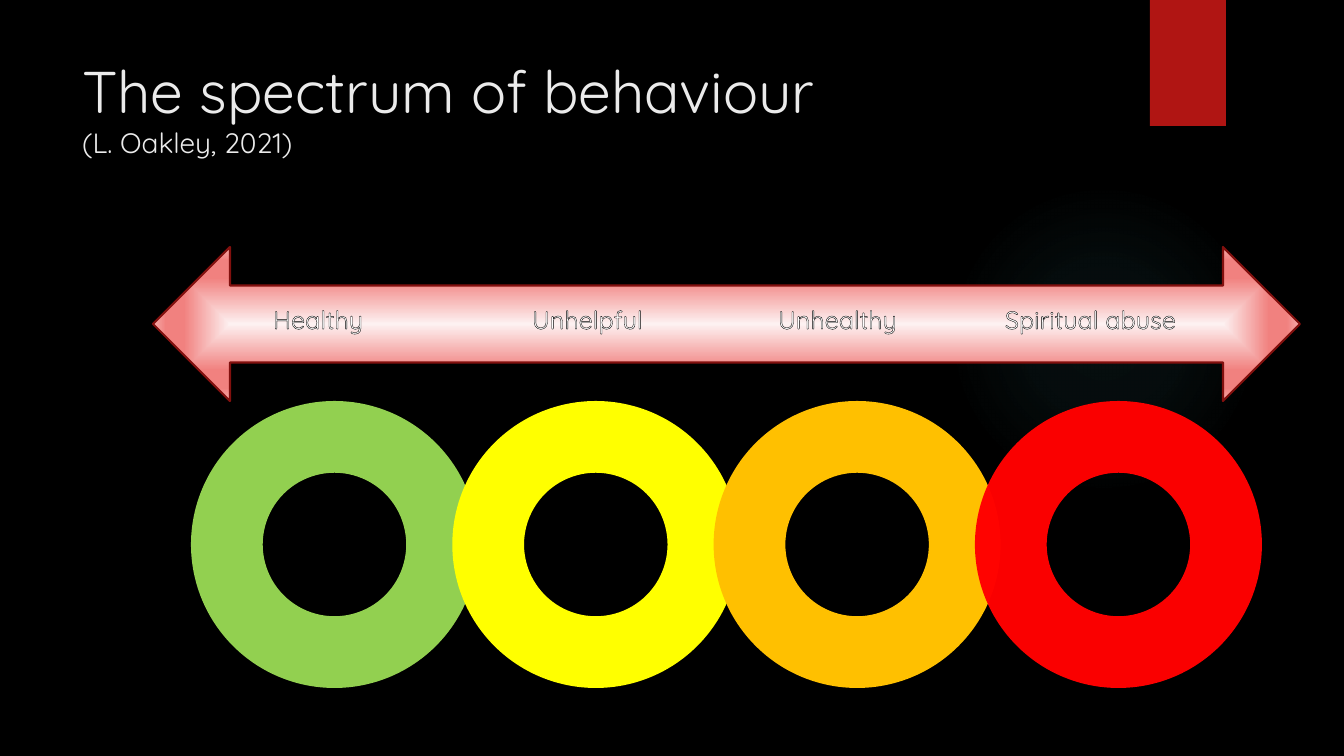
import pptx
import pptx.dml.color
import pptx.enum.shapes
import pptx.enum.text
import pptx.oxml
import pptx.oxml.ns
import pptx.util

RGB = pptx.dml.color.RGBColor
KIND = pptx.enum.shapes.MSO_SHAPE
NS = pptx.oxml.ns.nsdecls("a")
SCALE = 914400 / 100.8
FONT = "Quicksand"

BLACK = RGB(0x00, 0x00, 0x00)
WHITE = RGB(0xFF, 0xFF, 0xFF)
PALE = RGB(0xEB, 0xEB, 0xEB)
BRICK = RGB(0xB0, 0x15, 0x13)
MAROON = RGB(0x82, 0x10, 0x0E)
BLUSH = RGB(0xFD, 0xF1, 0xF1)
CORAL = RGB(0xF1, 0x81, 0x7F)
ROSE = RGB(0xF6, 0xAB, 0xAA)
TEAL = RGB(0x50, 0xB9, 0xC1)
GREEN = RGB(0x92, 0xD0, 0x50)
YELLOW = RGB(0xFF, 0xFF, 0x00)
AMBER = RGB(0xFF, 0xC0, 0x00)
RED = RGB(0xFF, 0x00, 0x00)


def px(num):
    return pptx.util.Emu(round(num * SCALE))


def place(box):
    return [px(num) for num in box]


def add_shape(slide, kind, box, color=None):
    shape = slide.shapes.add_shape(kind, *place(box))
    shape.shadow.inherit = False
    shape.line.fill.background()
    if color is not None:
        shape.fill.solid()
        shape.fill.fore_color.rgb = color
    return shape


def blend(shape, form, stops):
    """Fill from the centre outwards; stops are (percent, color, opacity)."""
    marks = "".join(
        f'<a:gs pos="{pos * 1000}"><a:srgbClr val="{color}">'
        f'<a:alpha val="{alpha * 1000}"/></a:srgbClr></a:gs>'
        for pos, color, alpha in stops)
    grad = pptx.oxml.parse_xml(
        f'<a:gradFill {NS} rotWithShape="1"><a:gsLst>{marks}</a:gsLst>'
        f'<a:path path="{form}"><a:fillToRect l="50000" t="50000" '
        'r="50000" b="50000"/></a:path></a:gradFill>')
    shape.fill.gradient()
    props = shape._element.spPr
    props.replace(props.find(pptx.oxml.ns.qn("a:gradFill")), grad)


def add_run(para, text, size, color):
    run = para.add_run()
    run.text = text
    run.font.name = FONT
    run.font.size = pptx.util.Pt(size)
    run.font.color.rgb = color
    return run


def add_decor(slide):
    glow = add_shape(slide, KIND.OVAL, (949, 184, 310, 310))
    blend(glow, "circle", [(0, TEAL, 7), (36, TEAL, 6), (69, TEAL, 0)])
    add_shape(slide, KIND.RECTANGLE, (1150, 0, 76, 126), BRICK)


def add_title(slide, box):
    title = slide.shapes.title
    title.left, title.top, title.width, title.height = place(box)
    frame = title.text_frame
    frame.auto_size = pptx.enum.text.MSO_AUTO_SIZE.NONE
    frame.vertical_anchor = pptx.enum.text.MSO_ANCHOR.TOP
    para = frame.paragraphs[0]
    para.alignment = pptx.enum.text.PP_ALIGN.LEFT
    add_run(para, "The spectrum of behaviour", 42, PALE)
    para.add_line_break()
    add_run(para, "(L. Oakley, 2021)", 20, PALE)


def add_rings(slide, box):
    left, top, width, size = box
    colors = [GREEN, YELLOW, AMBER, RED]
    step = (width - size) / (len(colors) - 1)
    for num, color in enumerate(colors):
        ring = add_shape(slide, KIND.DONUT,
                         (left + num * step, top, size, size), color)
    # The last ring lets a little of its neighbour through
    tint = ring._element.spPr.find(".//" + pptx.oxml.ns.qn("a:srgbClr"))
    tint.append(pptx.oxml.parse_xml(f'<a:alpha {NS} val="98000"/>'))


def add_arrow(slide, box):
    left, top, width, height = box
    arrow = add_shape(slide, KIND.LEFT_RIGHT_ARROW, box)
    blend(arrow, "shape", [(0, BLUSH, 100), (60, CORAL, 100),
                           (83, CORAL, 100), (100, ROSE, 100)])
    arrow.line.color.rgb = MAROON
    arrow.line.width = pptx.util.Pt(1.5)

    # Labels on one line, set by tab stops
    area = (left + 110, top + 52, width - 95, 41)
    frame = slide.shapes.add_textbox(*place(area)).text_frame
    frame.word_wrap = True
    para = frame.paragraphs[0]
    tabs = "".join(f'<a:tab pos="{px(pos)}" algn="l"/>'
                   for pos in (259, 505, 732))
    para._p.get_or_add_pPr().append(
        pptx.oxml.parse_xml(f"<a:tabLst {NS}>{tabs}</a:tabLst>"))
    words = ["Healthy", "Unhelpful", "Unhealthy", "Spiritual abuse"]
    run = add_run(para, "\t".join(words), 18, WHITE)
    edge = pptx.oxml.parse_xml(
        f'<a:ln {NS} w="{pptx.util.Pt(0.75)}"><a:solidFill>'
        f'<a:srgbClr val="{BLACK}"/></a:solidFill></a:ln>')
    run._r.get_or_add_rPr().insert(0, edge)


def main():
    deck = pptx.Presentation()
    deck.slide_width, deck.slide_height = px(1344), px(756)
    slide = deck.slides.add_slide(deck.slide_layouts[5])
    slide.background.fill.solid()
    slide.background.fill.fore_color.rgb = BLACK
    add_decor(slide)
    add_title(slide, (72, 50, 1037, 154))
    add_rings(slide, (191, 401, 1071, 287))
    add_arrow(slide, (153, 247, 1147, 154))
    deck.save("out.pptx")


if __name__ == "__main__":
    main()
